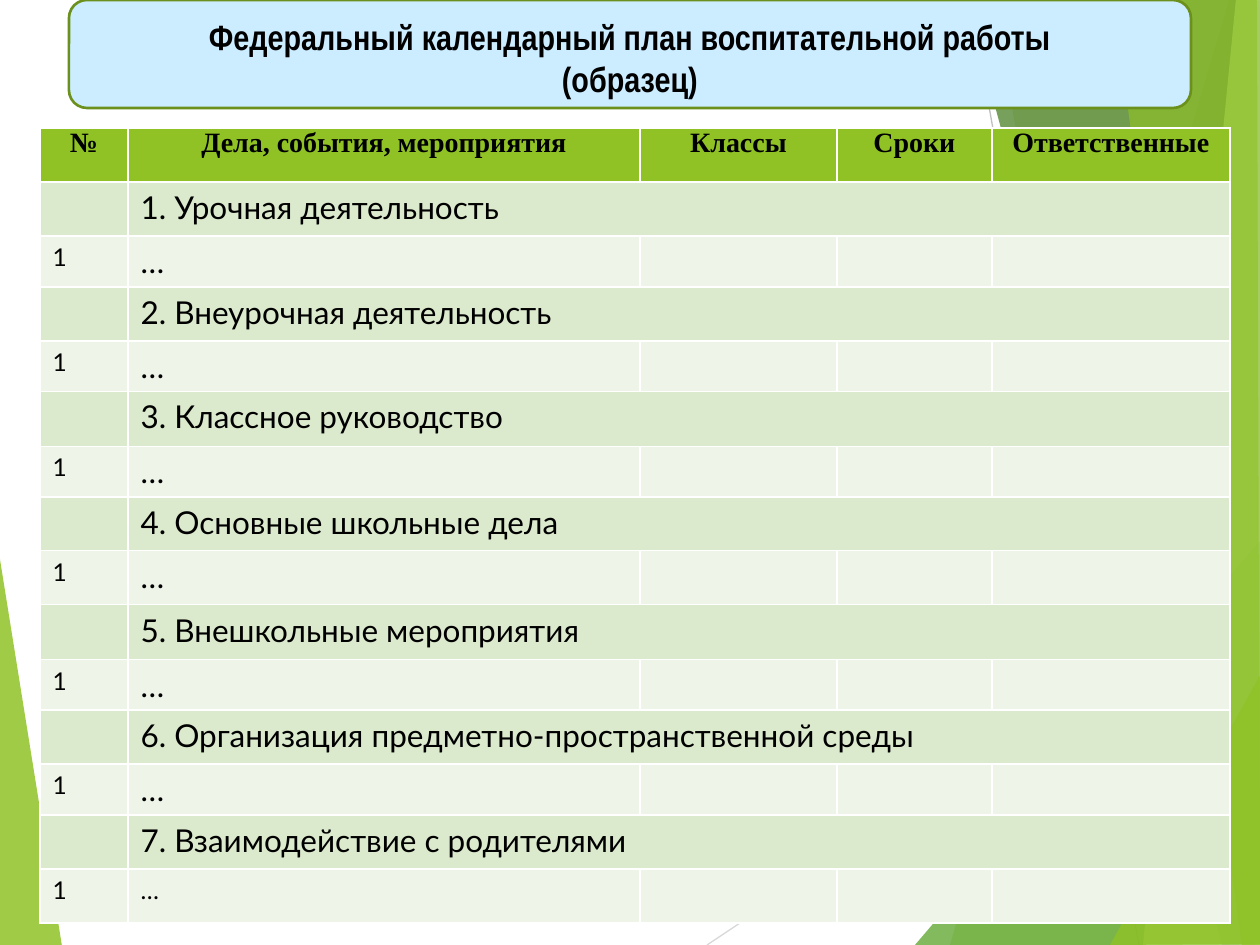
from lxml import etree
from pptx import Presentation
from pptx import util as u
from pptx.dml.color import RGBColor
from pptx.enum import shapes, text
from pptx.oxml.ns import qn

PX = 914400 / 126
BLACK = RGBColor(0x00, 0x00, 0x00)
LIME = RGBColor(0x90, 0xC2, 0x26)
GREEN = RGBColor(0x54, 0xA0, 0x21)
DARK = RGBColor(0x3F, 0x78, 0x19)
PALE = RGBColor(0xC0, 0xE4, 0x74)
GREY = RGBColor(0xD9, 0xD9, 0xD9)
MID_GREY = RGBColor(0xBF, 0xBF, 0xBF)
SECTION = RGBColor(0xDB, 0xE9, 0xCD)
ENTRY = RGBColor(0xEE, 0xF4, 0xE8)
SKY = RGBColor(0xCC, 0xEC, 0xFF)
OLIVE = RGBColor(0x6B, 0x90, 0x1C)


def px(n):
    return u.Emu(round(n * PX))


def style(p, size, name, bold=False, align=None):
    p.alignment = align
    p.font.size = u.Pt(size)
    p.font.name = name
    p.font.bold = bold
    p.font.color.rgb = BLACK


prs = Presentation()
prs.slide_width, prs.slide_height = px(1260), px(945)
s = prs.slides.add_slide(prs.slide_layouts[6])

for x1, y1, x2, y2, color in [(707, 945, 1261, 576, GREY), (970, 0, 1139, 945, MID_GREY)]:
    line = s.shapes.add_connector(shapes.MSO_CONNECTOR.STRAIGHT, px(x1), px(y1), px(x2), px(y2))
    line.line.color.rgb = color
    line.line.width = u.Pt(0.75)
    etree.SubElement(line._element.spPr, qn("a:effectLst"))

facets = [
    (LIME, 85, [(-1, 553), (62, 946), (-1, 945)]),
    (LIME, 30, [(1229, 0), (950, 945), (1262, 946), (1261, 1)]),
    (LIME, 20, [(993, -1), (1158, 945), (1261, 945), (1261, -1)]),
    (GREEN, 72, [(915, 945), (1260, 541), (1261, 945)]),
    (DARK, 70, [(966, -1), (1222, 945), (1261, 944), (1261, -1)]),
    (PALE, 70, [(1236, -1), (1143, 945), (1261, 945), (1260, -1)]),
    (LIME, 65, [(1113, -1), (1242, 945), (1260, 945), (1257, -1)]),
    (LIME, 80, [(1110, 945), (1261, 674), (1261, 944)]),
]
for color, opacity, points in facets:
    fb = s.shapes.build_freeform(*points[0], scale=PX)
    fb.add_line_segments(points[1:], close=True)
    sp = fb.convert_to_shape()
    sp.shadow.inherit = False
    sp.fill.solid()
    sp.fill.fore_color.rgb = color
    sp.line.fill.background()
    clr = sp._element.spPr.find(qn("a:solidFill"))[0]
    etree.SubElement(clr, qn("a:alpha"), val=str(opacity * 1000))

headers = ["№", "Дела, события, мероприятия", "Классы", "Сроки", "Ответственные"]
sections = [
    "Урочная деятельность",
    "Внеурочная деятельность",
    "Классное руководство",
    "Основные школьные дела",
    "Внешкольные мероприятия",
    "Организация предметно-пространственной среды",
    "Взаимодействие с родителями",
]
widths = [88, 512, 197, 155, 238]
heights = [54, 54, 51, 54, 50, 55, 50, 54, 54, 55, 50, 54, 51, 54, 54]

tbl = s.shapes.add_table(len(heights), len(widths), px(40), px(128),
                         px(sum(widths)), px(sum(heights))).table
for col, w in zip(tbl.columns, widths):
    col.width = px(w)
for row, h in zip(tbl.rows, heights):
    row.height = px(h)

rows = [headers]
for n, title in enumerate(sections, 1):
    rows += [["", f"{n}. {title}", "", "", ""], ["1", "…", "", "", ""]]

for i, row in enumerate(rows):
    for j, value in enumerate(row):
        c = tbl.cell(i, j)
        c.text = value
        p = c.text_frame.paragraphs[0]
        c.fill.solid()
        if i == 0:
            c.fill.fore_color.rgb = LIME
            c.margin_left = c.margin_right = px(9)
            c.margin_top = c.margin_bottom = 0
            style(p, 16, "Times New Roman", True, text.PP_ALIGN.CENTER)
        else:
            c.fill.fore_color.rgb = SECTION if i % 2 else ENTRY
            small = j != 1 or i == len(rows) - 1
            style(p, 14 if small else 18, "Lato")
    if i % 2:
        tbl.cell(i, 1).merge(tbl.cell(i, 4))

sp = s.shapes.add_shape(shapes.MSO_SHAPE.ROUNDED_RECTANGLE, px(69), 0, px(1122), px(108))
sp.shadow.inherit = False
sp.fill.solid()
sp.fill.fore_color.rgb = SKY
sp.line.color.rgb = OLIVE
sp.line.width = u.Pt(1.5)
tf = sp.text_frame
tf.word_wrap = True
tf.vertical_anchor = text.MSO_ANCHOR.MIDDLE
tf.margin_top = px(14)
tf.text = "Федеральный календарный план воспитательной работы\n(образец)"
for p in tf.paragraphs:
    style(p, 20, "Arial Narrow", True, text.PP_ALIGN.CENTER)

prs.save("out.pptx")
